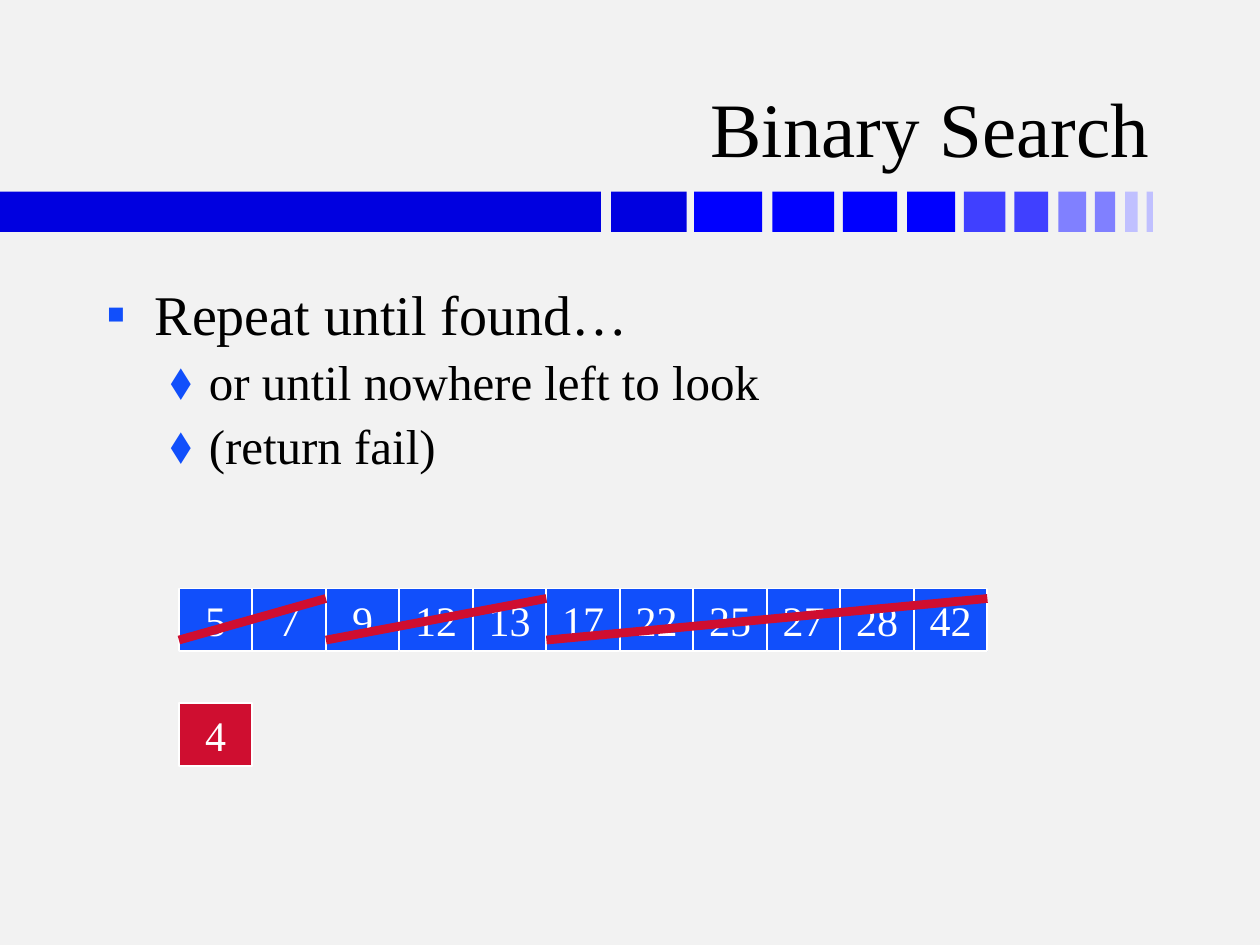
from typing import NamedTuple

from lxml.etree import SubElement as Sub
from pptx import Presentation
from pptx.dml.color import RGBColor as Rgb
from pptx.enum.shapes import MSO_CONNECTOR as Link, MSO_SHAPE as Shape
from pptx.enum.text import MSO_ANCHOR as Anchor, PP_ALIGN as Align
from pptx.oxml.ns import qn
from pptx.slide import Slide
from pptx.util import Inches, Pt

FONT = "Times New Roman"
COLORS = {
    "back": "F2F2F2", "text": "000000", "white": "FFFFFF",
    "cell": "114FFB", "red": "CF0E30",
    "navy": "0000E0", "blue": "0000FF", "mid": "4040FF",
    "light": "8080FF", "pale": "C0C0FF",
}
LEFT, TOP, STEP, HIGH = 1.42, 4.67, 7 / 12, 0.5


class Bar(NamedTuple):
    left: float
    width: float
    color: str


class Point(NamedTuple):
    text: str
    level: int
    size: int
    mark: str
    left: float
    hang: float
    space: float


class Strike(NamedTuple):
    first: int
    last: int


BARS = [
    Bar(0, 4.77, "navy"), Bar(4.85, 0.6, "navy"),
    Bar(5.51, 0.54, "blue"), Bar(6.13, 0.49, "blue"),
    Bar(6.69, 0.43, "blue"), Bar(7.2, 0.38, "blue"),
    Bar(7.65, 0.33, "mid"), Bar(8.05, 0.27, "mid"),
    Bar(8.4, 0.22, "light"), Bar(8.69, 0.16, "light"),
    Bar(8.93, 0.1, "pale"), Bar(9.1, 0.05, "pale"),
]
POINTS = [
    Point("Repeat until found…", 0, 32, "▪", 0.38, 0.38, 0),
    Point("or until nowhere left to look", 1, 28, "⬧", 0.81, 0.31, 2.8),
    Point("(return fail)", 1, 28, "⬧", 0.81, 0.31, 2.8),
]
VALUES = [5, 7, 9, 12, 13, 17, 22, 25, 27, 28, 42]
STRIKES = [Strike(5, 11), Strike(2, 5), Strike(0, 2)]


def tint(name: str) -> Rgb:
    return Rgb.from_string(COLORS[name])


def style(para, size: int, color: str) -> None:
    para.font.name = FONT
    para.font.size = Pt(size)
    para.font.color.rgb = tint(color)


def add_rect(slide: Slide, left: float, top: float, width: float,
             high: float, color: str):
    rect = slide.shapes.add_shape(
        Shape.RECTANGLE, Inches(left), Inches(top), Inches(width), Inches(high))
    rect.shadow.inherit = False
    rect.fill.solid()
    rect.fill.fore_color.rgb = tint(color)
    rect.line.fill.background()
    return rect


def add_cell(slide: Slide, left: float, top: float, value: int,
             color: str) -> None:
    cell = add_rect(slide, left, top, STEP, HIGH, color)
    cell.line.color.rgb = tint("white")
    cell.line.width = Pt(1)
    frame = cell.text_frame
    frame.word_wrap = False
    frame.vertical_anchor = Anchor.MIDDLE
    para = frame.paragraphs[0]
    para.text = str(value)
    para.alignment = Align.CENTER
    style(para, 24, "white")


def add_box(slide: Slide, left: float, top: float, width: float, high: float):
    box = slide.shapes.add_textbox(
        Inches(left), Inches(top), Inches(width), Inches(high))
    box.text_frame.word_wrap = True
    return box.text_frame


def add_title(slide: Slide, text: str) -> None:
    frame = add_box(slide, 0.74, 0.19, 8.48, 1.23)
    frame.vertical_anchor = Anchor.BOTTOM
    para = frame.paragraphs[0]
    para.text = text
    para.alignment = Align.RIGHT
    style(para, 44, "text")


def add_points(slide: Slide, points: list[Point]) -> None:
    frame = add_box(slide, 0.75, 2.17, 8.5, 4.5)
    for i, point in enumerate(points):
        para = frame.add_paragraph() if i else frame.paragraphs[0]
        para.text = point.text
        para.level = point.level
        para.space_before = Pt(point.space)
        props = para._p.get_or_add_pPr()
        props.set("marL", str(Inches(point.left)))
        props.set("indent", str(-Inches(point.hang)))
        Sub(Sub(props, qn("a:buClr")), qn("a:srgbClr"), val=COLORS["cell"])
        Sub(props, qn("a:buFont"), typeface=FONT)
        Sub(props, qn("a:buChar"), char=point.mark)
        style(para, point.size, "text")


def add_strike(slide: Slide, strike: Strike) -> None:
    line = slide.shapes.add_connector(
        Link.STRAIGHT,
        Inches(LEFT + strike.first * STEP), Inches(5.08),
        Inches(LEFT + strike.last * STEP), Inches(4.75))
    line.line.color.rgb = tint("red")
    line.line.width = Pt(5)
    Sub(line._element.spPr, qn("a:effectLst"))


def main() -> None:
    deck = Presentation()
    deck.slide_width, deck.slide_height = Inches(10), Inches(7.5)
    slide = deck.slides.add_slide(deck.slide_layouts[6])
    slide.background.fill.solid()
    slide.background.fill.fore_color.rgb = tint("back")
    for bar in BARS:
        add_rect(slide, bar.left, 1.52, bar.width, 0.32, bar.color)
    add_title(slide, "Binary Search")
    add_points(slide, POINTS)
    for i, value in enumerate(VALUES):
        add_cell(slide, LEFT + i * STEP, TOP, value, "cell")
    add_cell(slide, LEFT, 5.58, 4, "red")
    for strike in STRIKES:
        add_strike(slide, strike)
    deck.save("out.pptx")


if __name__ == "__main__":
    main()
